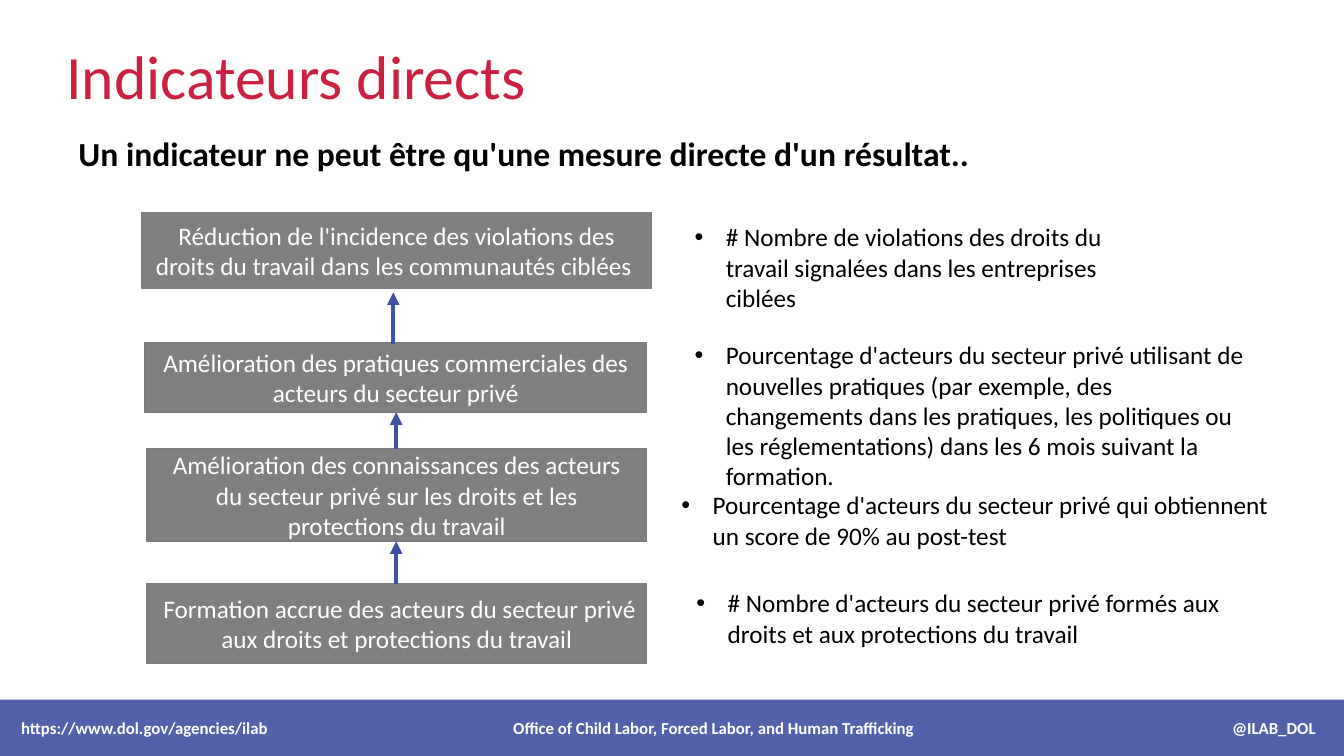
from dataclasses import dataclass
from lxml.etree import SubElement
from pptx import Presentation
from pptx.dml.color import RGBColor as Rgb
from pptx.enum.shapes import MSO_CONNECTOR as Link, MSO_SHAPE as Kind
from pptx.enum.text import MSO_ANCHOR as Anchor, MSO_AUTO_SIZE as Fit, PP_ALIGN as Align
from pptx.oxml.ns import qn
from pptx.util import Inches, Pt


@dataclass(frozen=True)
class Theme:
    font: str = "Calibri"
    red: str = "CB2042"
    blue: str = "3F51A2"
    gray: str = "808080"
    edge: str = "7A7A7A"
    black: str = "000000"
    white: str = "FFFFFF"
    title: int = 44
    lead: int = 24
    body: int = 18
    foot: int = 12


THEME = Theme()

STEPS = [
    ((1.46, 5.79, 4.95, 0.79),
     " Formation accrue des acteurs du secteur privé aux droits et protections du travail"),
    ((1.46, 4.45, 4.95, 0.92),
     "Amélioration des connaissances des acteurs du secteur privé sur les droits et les protections du travail"),
    ((1.44, 3.4, 4.97, 0.69),
     "Amélioration des pratiques commerciales des acteurs du secteur privé"),
    ((1.41, 2.11, 5.05, 0.75),
     "Réduction de l'incidence des violations des droits du travail dans les communautés ciblées "),
]
ARROWS = [(3.93, 5.79, 5.37), (3.93, 4.45, 4.09), (3.9, 3.41, 2.9)]
SIGNS = [
    ((6.79, 2.15, 4.88, 1.01),
     "# Nombre de violations des droits du travail signalées dans les entreprises ciblées"),
    ((6.79, 3.32, 5.68, 1.62),
     "Pourcentage d'acteurs du secteur privé utilisant de nouvelles pratiques (par exemple, des "
     "changements dans les pratiques, les politiques ou les réglementations) dans les 6 mois suivant la formation."),
    ((6.66, 4.81, 6.08, 0.71),
     "Pourcentage d'acteurs du secteur privé qui obtiennent un score de 90% au post-test"),
    ((6.81, 5.78, 5.56, 0.71),
     "# Nombre d'acteurs du secteur privé formés aux droits et aux protections du travail"),
]
FOOT = ["https://www.dol.gov/agencies/ilab",
        "Office of Child Labor, Forced Labor, and Human Trafficking", "@ILAB_DOL"]
STOPS = [(6.87, "ctr"), (12.84, "r")]


def write(shape, text, size, color, bold=False, align=Align.LEFT, anchor=Anchor.TOP):
    frame = shape.text_frame
    frame.text = text
    frame.word_wrap = True
    frame.auto_size = Fit.NONE
    frame.vertical_anchor = anchor
    para = frame.paragraphs[0]
    para.alignment = align
    for run in para.runs:
        font = run.font
        font.name = THEME.font
        font.size = Pt(size)
        font.bold = bold
        font.color.rgb = Rgb.from_string(color)
    return para


def add_title(slide, text):
    title = slide.shapes.title
    title.left, title.top = Inches(0.56), Inches(0.12)
    title.width, title.height = Inches(11.57), Inches(1.05)
    para = write(title, text, THEME.title, THEME.red, anchor=Anchor.BOTTOM)
    para.line_spacing = 0.9


def add_text(slide, area, text, size, bold=False):
    box = slide.shapes.add_textbox(*map(Inches, area))
    return write(box, text, size, THEME.black, bold)


def add_sign(slide, area, text):
    props = add_text(slide, area, text, THEME.body)._p.get_or_add_pPr()
    props.set("marL", str(Inches(0.31)))
    props.set("indent", str(Inches(-0.31)))
    SubElement(props, qn("a:buFont"), typeface="Arial")
    SubElement(props, qn("a:buChar"), char="•")


def add_rect(slide, area, color):
    rect = slide.shapes.add_shape(Kind.RECTANGLE, *map(Inches, area))
    rect.shadow.inherit = False
    rect.fill.solid()
    rect.fill.fore_color.rgb = Rgb.from_string(color)
    rect.line.fill.background()
    return rect


def add_step(slide, area, text):
    rect = add_rect(slide, area, THEME.gray)
    rect.line.color.rgb = Rgb.from_string(THEME.edge)
    rect.line.width = Pt(1)
    write(rect, text, THEME.body, THEME.white, align=Align.CENTER, anchor=Anchor.MIDDLE)


def add_arrow(slide, x, start, end):
    arrow = slide.shapes.add_connector(
        Link.STRAIGHT, Inches(x), Inches(start), Inches(x), Inches(end))
    arrow.line.color.rgb = Rgb.from_string(THEME.blue)
    arrow.line.width = Pt(3)
    SubElement(arrow.line._get_or_add_ln(), qn("a:tailEnd"), type="triangle")
    SubElement(arrow._element.spPr, qn("a:effectLst"))


def add_foot(slide):
    bar = add_rect(slide, (0, 6.94, 13.37, 0.56), THEME.blue)
    tint = bar._element.spPr.find(qn("a:solidFill"))[0]
    SubElement(tint, qn("a:alpha"), val="90000")
    para = write(bar, "\t".join(FOOT), THEME.foot, THEME.white, True, anchor=Anchor.MIDDLE)
    bar.text_frame.margin_left = Inches(0.21)
    tabs = SubElement(para._p.get_or_add_pPr(), qn("a:tabLst"))
    for place, side in STOPS:
        SubElement(tabs, qn("a:tab"), pos=str(Inches(place)), algn=side)


def main():
    deck = Presentation()
    deck.slide_width, deck.slide_height = Inches(13.33), Inches(7.5)
    slide = deck.slides.add_slide(deck.slide_layouts[5])
    add_title(slide, "Indicateurs directs")
    add_text(slide, (0.68, 1.27, 9.88, 0.5),
             "Un indicateur ne peut être qu'une mesure directe d'un résultat..",
             THEME.lead, True)
    for area, text in STEPS:
        add_step(slide, area, text)
    for arrow in ARROWS:
        add_arrow(slide, *arrow)
    for area, text in SIGNS:
        add_sign(slide, area, text)
    add_foot(slide)
    deck.save("out.pptx")


if __name__ == "__main__":
    main()
